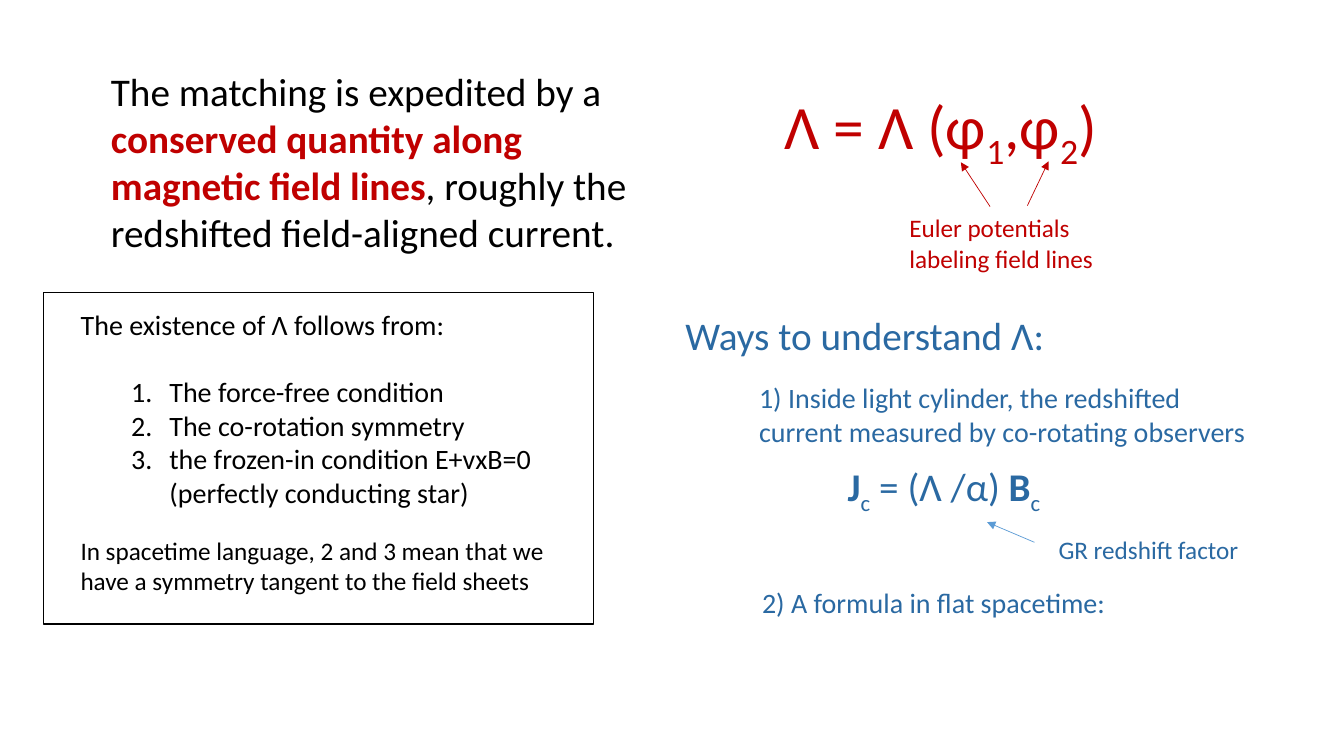
import pptx
import pptx.util
import pptx.dml.color
import pptx.enum.shapes
import pptx.enum.text
import pptx.oxml.ns
import lxml.etree

Inches = pptx.util.Inches
Pt = pptx.util.Pt
RGBColor = pptx.dml.color.RGBColor
qn = pptx.oxml.ns.qn

BLACK = RGBColor(0x00, 0x00, 0x00)
RED = RGBColor(0xC0, 0x00, 0x00)
BLUE = RGBColor(0x2A, 0x69, 0xA2)
LIGHT_BLUE = RGBColor(0x5B, 0x9B, 0xD5)

SUB = {"baseline": "-25000"}
BOLD = {"bold": True}
EMPHASIS = {"bold": True, "color": RED}


class SlideBuilder:
    """Holds the text style and the current slide."""

    font_name = "Calibri"

    def __init__(self, page):
        self.page = page

    def add_spans(self, para, spans, size, color):
        """Add spans given as plain strings or (string, format) pairs."""
        for item in spans:
            text, extra = (item, {}) if isinstance(item, str) else item
            values = {"name": self.font_name, "size": Pt(size),
                      "bold": False, "color": color} | extra
            span = para.add_run()
            span.text = text
            span.font.color.rgb = values.pop("color")
            if "baseline" in values:
                span._r.get_or_add_rPr().set("baseline", values.pop("baseline"))
            for name, value in values.items():
                setattr(span.font, name, value)

    def fill_text(self, box, paras, size, color, wrap=True):
        frame = box.text_frame
        settings = {"word_wrap": wrap,
                    "auto_size": pptx.enum.text.MSO_AUTO_SIZE.NONE,
                    "vertical_anchor": pptx.enum.text.MSO_ANCHOR.TOP}
        for name, value in settings.items():
            setattr(frame, name, value)
        layout = {"alignment": pptx.enum.text.PP_ALIGN.LEFT, "line_spacing": 1.0,
                  "space_before": Pt(0), "space_after": Pt(0)}
        for index, spans in enumerate(paras):
            para = frame.paragraphs[0] if index == 0 else frame.add_paragraph()
            for name, value in layout.items():
                setattr(para, name, value)
            self.add_spans(para, spans, size, color)
        return frame

    def text(self, area, spans, size, color, wrap=True):
        box = self.page.shapes.add_textbox(*map(Inches, area))
        self.fill_text(box, [spans], size, color, wrap)

    def placeholder(self, index, area, paras, size, color):
        box = self.page.placeholders[index]
        for name, value in zip(("left", "top", "width", "height"), area):
            setattr(box, name, Inches(value))
        return self.fill_text(box, paras, size, color)

    def bullet(self, para, left, hanging, numbered):
        props = para._p.get_or_add_pPr()
        props.set("marL", str(Inches(left)))
        props.set("indent", str(Inches(-hanging)))
        if numbered:
            font = lxml.etree.SubElement(props, qn("a:buFont"))
            font.set("typeface", "+mj-lt")
            number = lxml.etree.SubElement(props, qn("a:buAutoNum"))
            number.set("type", "arabicPeriod")
        else:
            lxml.etree.SubElement(props, qn("a:buNone"))

    def arrow(self, start, end, color):
        arrow = self.page.shapes.add_connector(
            pptx.enum.shapes.MSO_CONNECTOR.STRAIGHT, *map(Inches, start + end))
        arrow.line.color.rgb = color
        arrow.line.width = Pt(0.5)
        props = arrow._element.spPr
        head = lxml.etree.SubElement(props.find(qn("a:ln")), qn("a:tailEnd"))
        head.set("type", "triangle")
        lxml.etree.SubElement(props, qn("a:effectLst"))

    def frame(self, area, color):
        box = self.page.shapes.add_shape(
            pptx.enum.shapes.MSO_SHAPE.RECTANGLE, *map(Inches, area))
        box.shadow.inherit = False
        box.fill.background()
        box.line.color.rgb = color
        box.line.width = Pt(1)


def main():
    deck = pptx.Presentation()
    deck.slide_width, deck.slide_height = Inches(13.33), Inches(7.5)
    slide = SlideBuilder(deck.slides.add_slide(deck.slide_layouts[1]))

    # Main statement
    slide.placeholder(0, (1, 0.62, 5.6, 1.99), [
        ["The matching is expedited by a"],
        [("conserved quantity along magnetic field lines", EMPHASIS),
         ", roughly the redshifted field-aligned current."],
    ], 28, BLACK)

    # Conserved quantity and its Euler potentials
    slide.text((7.68, 0.82, 3.39, 0.84),
               ["Λ = Λ (φ", ("1", SUB), ",φ", ("2", SUB), ")"], 44, RED, wrap=False)
    slide.arrow((9.82, 2.05), (9.53, 1.61), RED)
    slide.arrow((10.19, 2.04), (10.4, 1.6), RED)
    slide.text((8.92, 2.06, 2.04, 0.71), ["Euler potentials labeling field lines"], 18, RED)

    # Framed conditions
    conditions = slide.placeholder(1, (0.7, 3, 5.19, 2.12), [
        ["The existence of Λ follows from:"],
        ["The force-free condition"],
        ["The co-rotation symmetry"],
        ["the frozen-in condition E+vxB=0 (perfectly conducting star)"],
    ], 20, BLACK)
    intro, *points = conditions.paragraphs
    intro.space_after = Pt(24)
    slide.bullet(intro, 0, 0, numbered=False)
    for point in points:
        point.level = 1
        slide.bullet(point, 0.88, 0.38, numbered=True)
    slide.text((0.7, 5.26, 4.85, 0.71),
               ["In spacetime language, 2 and 3 mean that we have a symmetry "
                "tangent to the field sheets"], 18, BLACK)
    slide.frame((0.43, 2.9, 5.46, 3.29), BLACK)

    # Ways to understand the quantity
    slide.text((6.7, 3.04, 3.8, 0.57), ["Ways to understand Λ:"], 28, BLUE, wrap=False)
    slide.text((7.43, 3.73, 5.17, 0.77),
               ["1) Inside light cylinder, the redshifted current measured by "
                "co-rotating observers"], 20, BLUE)
    slide.text((8.31, 4.54, 2.17, 0.57),
               [("J", BOLD), ("c", SUB), " = (Λ /α) ", ("B", BOLD), ("c", SUB)],
               28, BLUE, wrap=False)
    slide.arrow((10.26, 5.38), (9.79, 5.18), LIGHT_BLUE)
    slide.text((10.4, 5.25, 2.01, 0.4), ["GR redshift factor"], 18, BLUE, wrap=False)
    slide.text((7.46, 5.76, 4.72, 0.44), ["2) A formula in flat spacetime:"], 20, BLUE)

    deck.save("out.pptx")


if __name__ == "__main__":
    main()
